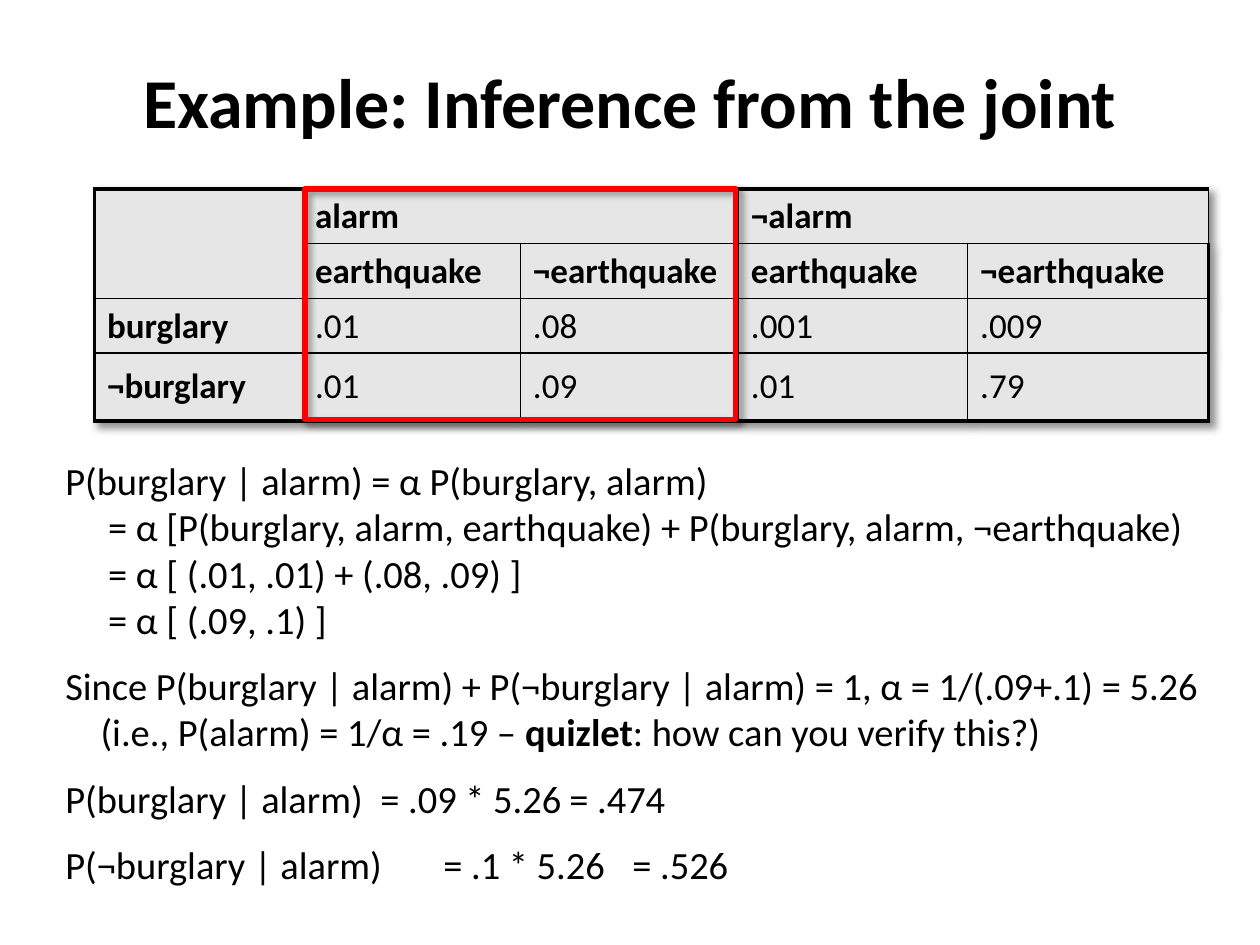
import pptx
import pptx.util
import pptx.dml.color
import pptx.enum.shapes
import pptx.enum.text
import pptx.oxml
import pptx.oxml.ns
from pptx.util import Inches

BLACK = pptx.dml.color.RGBColor(0x00, 0x00, 0x00)
GREY = pptx.dml.color.RGBColor(0xE6, 0xE6, 0xE6)
RED = pptx.dml.color.RGBColor(0xFF, 0x00, 0x00)
NS = pptx.oxml.ns.nsdecls("a")
SHADOW = (
    f'<a:effectLst {NS}><a:outerShdw blurRad="50800" dist="38100" dir="2700000" algn="tl" rotWithShape="0">'
    '<a:srgbClr val="000000"><a:alpha val="43000"/></a:srgbClr></a:outerShdw></a:effectLst>'
)


def add_run(paragraph, text, size, bold=False):
    run = paragraph.add_run()
    run.text = text
    run.font.name = "Calibri"
    run.font.size = pptx.util.Pt(size)
    run.font.bold = bold
    run.font.color.rgb = BLACK


def add_border(cell, side, width):
    cell._tc.get_or_add_tcPr().append(pptx.oxml.parse_xml(
        f'<a:ln{side} {NS} w="{int(pptx.util.Pt(width))}"><a:solidFill>'
        f'<a:srgbClr val="{BLACK}"/></a:solidFill></a:ln{side}>'))


deck = pptx.Presentation()
deck.slide_width = Inches(10)
deck.slide_height = Inches(7.5)
slide = deck.slides.add_slide(deck.slide_layouts[6])

title = slide.shapes.add_textbox(Inches(0.75), Inches(0.17), Inches(8.5), Inches(1.25)).text_frame
title.word_wrap = True
title.vertical_anchor = pptx.enum.text.MSO_ANCHOR.MIDDLE
title.paragraphs[0].alignment = pptx.enum.text.PP_ALIGN.CENTER
add_run(title.paragraphs[0], "Example: Inference from the joint", 40, True)

joint_rows = [
    ["", "alarm", "", "¬alarm", ""],
    ["", "earthquake", "¬earthquake", "earthquake", "¬earthquake"],
    ["burglary", ".01", ".08", ".001", ".009"],
    ["¬burglary", ".01", ".09", ".01", ".79"],
]
column_widths = [1.65, 1.73, 1.73, 1.82, 1.91]
row_heights = [0.43, 0.43, 0.43, 0.54]
joint = slide.shapes.add_table(
    4, 5, Inches(0.75), Inches(1.5), Inches(sum(column_widths)), Inches(sum(row_heights))).table
joint.first_row = False
joint.horz_banding = False
joint._tbl.tblPr.insert(0, pptx.oxml.parse_xml(SHADOW))
for column, width in zip(joint.columns, column_widths):
    column.width = Inches(width)
for row, height in zip(joint.rows, row_heights):
    row.height = Inches(height)

for r, values in enumerate(joint_rows):
    for c, value in enumerate(values):
        cell = joint.cell(r, c)
        cell.vertical_anchor = pptx.enum.text.MSO_ANCHOR.MIDDLE
        outer_edges = {"L": c == 0, "R": c == 4, "T": r == 0, "B": r == 3}
        for side, outer in outer_edges.items():
            add_border(cell, side, 2.25 if outer else 1)
        cell.fill.solid()
        cell.fill.fore_color.rgb = GREY
        if value:
            add_run(cell.text_frame.paragraphs[0], value, 20, r < 2 or c == 0)

joint.cell(0, 0).merge(joint.cell(1, 0))
joint.cell(0, 1).merge(joint.cell(0, 2))
joint.cell(0, 3).merge(joint.cell(0, 4))

derivation_steps = [
    (0.34, [["P(burglary | alarm) = α P(burglary, alarm)"],
            ["= α [P(burglary, alarm, earthquake) + P(burglary, alarm, ¬earthquake)"],
            ["= α [ (.01, .01) + (.08, .09) ]"],
            ["= α [ (.09, .1) ]"]]),
    (0.28, [["Since P(burglary | alarm) + P(¬burglary | alarm) = 1, α = 1/(.09+.1) = 5.26"],
            ["(i.e., P(alarm) = 1/α = .19 – ", "quizlet", ": how can you verify this?)"]]),
    (0, [["P(burglary | alarm)\t= .09 * 5.26\t= .474"]]),
    (0, [["P(¬burglary | alarm)\t= .1 * 5.26\t= .526"]]),
]
derivation = slide.shapes.add_textbox(Inches(0.42), Inches(3.58), Inches(9.42), Inches(3.62)).text_frame
derivation.word_wrap = True
for i, (indent, lines) in enumerate(derivation_steps):
    step = derivation.add_paragraph() if i else derivation.paragraphs[0]
    step.space_before = pptx.util.Pt(11.5 if i else 0)
    properties = step._p.get_or_add_pPr()
    properties.set("marL", str(int(Inches(indent))))
    properties.set("indent", str(-int(Inches(indent))))
    if indent == 0:
        properties.append(pptx.oxml.parse_xml(
            f'<a:tabLst {NS}><a:tab pos="{int(Inches(2.64))}" algn="l"/>'
            f'<a:tab pos="{int(Inches(4.21))}" algn="l"/></a:tabLst>'))
    for n, line in enumerate(lines):
        if n:
            step.add_line_break()
        for text in line:
            add_run(step, text, 22, text == "quizlet")

alarm_frame = slide.shapes.add_shape(
    pptx.enum.shapes.MSO_SHAPE.RECTANGLE, Inches(2.42), Inches(1.5), Inches(3.42), Inches(1.83))
alarm_frame.fill.background()
alarm_frame.line.color.rgb = RED
alarm_frame.line.width = pptx.util.Pt(3)
alarm_frame._element.spPr.append(pptx.oxml.parse_xml(SHADOW))

deck.save("out.pptx")
